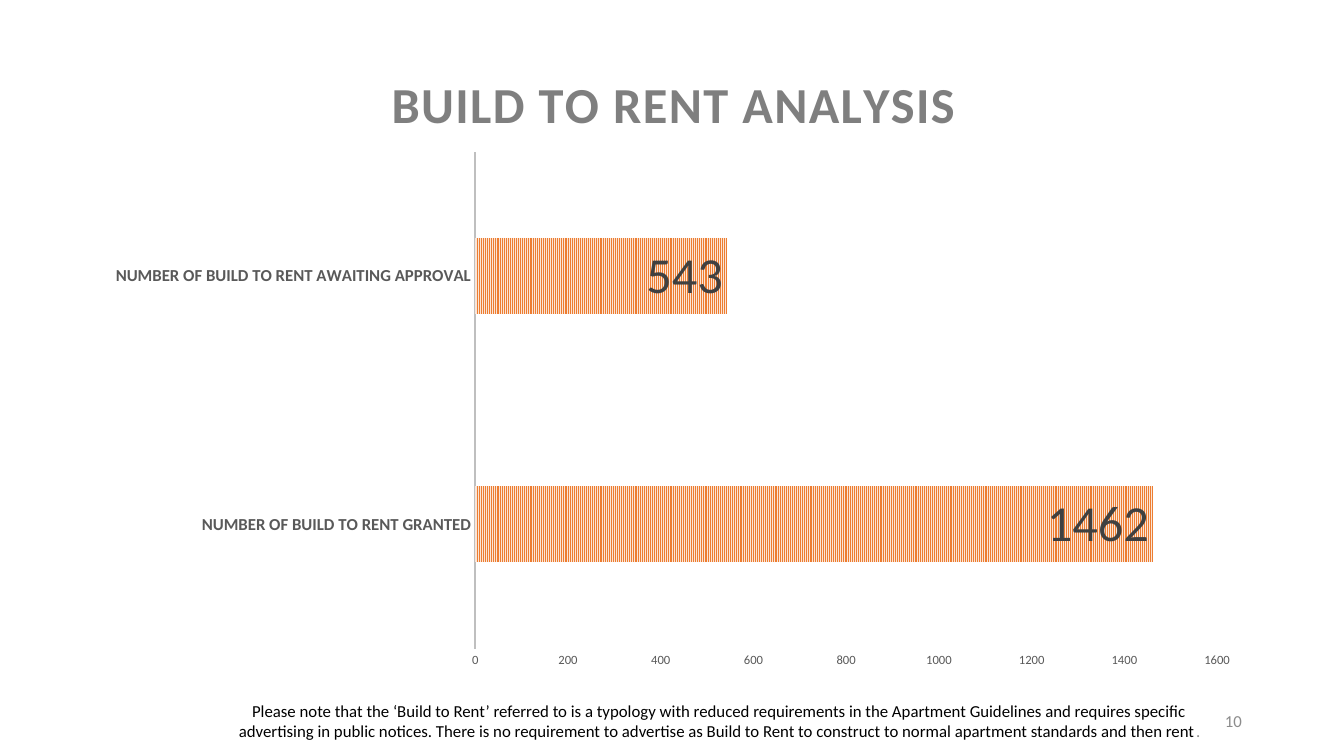
"""Build the slide on build-to-rent homes granted and awaiting approval."""
from lxml.etree import SubElement
from pptx import Presentation
from pptx.chart.data import CategoryChartData
from pptx.dml.color import RGBColor
from pptx.enum.chart import XL_CHART_TYPE, XL_LABEL_POSITION, XL_TICK_MARK
from pptx.enum.dml import MSO_PATTERN
from pptx.enum.text import MSO_ANCHOR, PP_ALIGN
from pptx.oxml.ns import qn
from pptx.util import Cm, Pt

COLORS = {
    "note": "000000", "muted": "8C8C8C", "title": "7F7F7F", "axis": "595959",
    "axis line": "BFBFBF", "label": "404040", "stripe": "ED7D31", "gap": "FBE5D6",
}


def style_font(font, size, color, bold=False):
    for name, value in {"name": "Calibri", "size": Pt(size), "bold": bold}.items():
        setattr(font, name, value)
    font.color.rgb = RGBColor.from_string(COLORS[color])


def place(layout, settings):
    manual = layout.find(qn("c:manualLayout"))
    if manual is None:
        manual = SubElement(layout, qn("c:manualLayout"))
    for name, value in settings.items():
        SubElement(manual, qn(f"c:{name}")).set("val", str(value))


deck = Presentation()
deck.slide_width, deck.slide_height = Cm(33.87), Cm(19.05)
page = deck.slides.add_slide(deck.slide_layouts[6])

note = (
    "Please note that the ‘Build to Rent’ referred to is a typology with reduced "
    "requirements in the Apartment Guidelines and requires specific advertising in "
    "public notices. There is no requirement to advertise as Build to Rent to construct "
    "to normal apartment standards and then rent"
)
footers = [
    (5.23, 25.81, PP_ALIGN.CENTER, [(note, "note"), (".", "muted")]),
    (23.93, 7.62, PP_ALIGN.RIGHT, [("10", "muted")]),
]
for left, width, alignment, spans in footers:
    box = page.shapes.add_textbox(Cm(left), Cm(17.65), Cm(width), Cm(1.02))
    box.text_frame.word_wrap = True
    box.text_frame.vertical_anchor = MSO_ANCHOR.MIDDLE
    para = box.text_frame.paragraphs[0]
    para.alignment = alignment
    for text, color in spans:
        span = para.add_run()
        span.text = text
        style_font(span.font, 12, color)

data = CategoryChartData()
data.categories = [
    "NUMBER OF BUILD TO RENT GRANTED",
    "NUMBER OF BUILD TO RENT AWAITING APPROVAL",
]
data.add_series("Series 1", [1462, 543])
chart = page.shapes.add_chart(
    XL_CHART_TYPE.BAR_CLUSTERED, Cm(2.34), Cm(0.69), Cm(29.21), Cm(16.48), data
).chart
chart.has_legend = False
style_font(chart.font, 10, "note")

chart.has_title = True
title = chart.chart_title
para = title.text_frame.paragraphs[0]
span = para.add_run()
span.text = "BUILD TO RENT ANALYSIS"
style_font(span.font, 36, "title", bold=True)
span.font._element.set("spc", "100")
title_element = title._element
title_layout = title_element.find(qn("c:layout"))
if title_layout is None:
    title_layout = SubElement(title_element, qn("c:layout"))
    title_element.find(qn("c:tx")).addnext(title_layout)
place(title_layout, {"xMode": "edge", "yMode": "edge", "x": 0.25, "y": 0.05})

plot_area = chart._chartSpace.chart.plotArea
plot_layout = plot_area.find(qn("c:layout"))
if plot_layout is None:
    plot_layout = SubElement(plot_area, qn("c:layout"))
    plot_area.insert(0, plot_layout)
place(plot_layout, {
    "layoutTarget": "inner", "xMode": "edge", "yMode": "edge",
    "x": 0.33, "y": 0.19, "w": 0.64, "h": 0.76,
})

axes = [(chart.category_axis, 12, True), (chart.value_axis, 9, False)]
for axis, size, bold in axes:
    axis.has_major_gridlines = False
    axis.major_tick_mark = axis.minor_tick_mark = XL_TICK_MARK.NONE
    style_font(axis.tick_labels.font, size, "axis", bold)
category_line = chart.category_axis.format.line
category_line.width = Pt(1.5)
category_line.color.rgb = RGBColor.from_string(COLORS["axis line"])
chart.value_axis.format.line.fill.background()
for name, value in {"minimum_scale": 0, "maximum_scale": 1600, "major_unit": 200}.items():
    setattr(chart.value_axis, name, value)

plot = chart.plots[0]
for name, value in {"gap_width": 227, "overlap": -48, "vary_by_categories": False}.items():
    setattr(plot, name, value)
series = plot.series[0]
fill = series.format.fill
fill.patterned()
fill.pattern = MSO_PATTERN.NARROW_VERTICAL
fill.fore_color.rgb = RGBColor.from_string(COLORS["stripe"])
fill.back_color.rgb = RGBColor.from_string(COLORS["gap"])
labels = series.data_labels
labels.show_value = True
labels.position = XL_LABEL_POSITION.INSIDE_END
style_font(labels.font, 36, "label")

deck.save("out.pptx")
